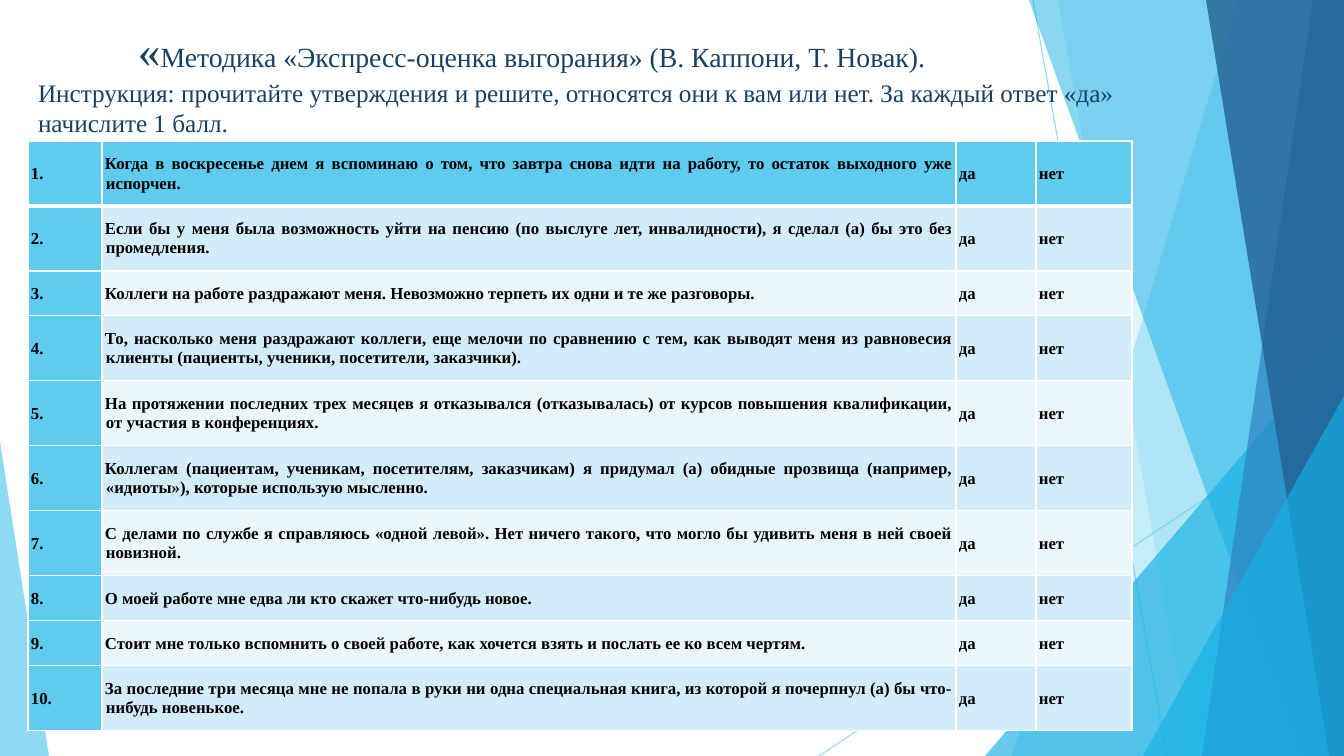
import pptx
import pptx.util
import pptx.dml.color
import pptx.enum.shapes
import pptx.enum.text
import pptx.oxml
import pptx.oxml.ns

COLORS = {
    "sky": "5FCBEF", "cyan": "17B0E4", "blue": "2E83C3", "navy": "226292",
    "heading": "174162", "band": "D2ECF9", "pale": "EAF6FC",
    "white": "FFFFFF", "black": "000000",
}
FONT = "Times New Roman"
WIDTH, HEIGHT = 1344, 756
PX = 12192000 / WIDTH

TITLE = [("«", 32.4), ("Методика «Экспресс-оценка выгорания» (В. Каппони, Т. Новак).", 19.8)]
INSTRUCTION = ("Инструкция: прочитайте утверждения и решите, относятся они к вам или нет. "
               "За каждый ответ «да» начислите 1 балл.")
ANSWERS = ["да", "нет"]
TALL, SHORT = 65, 45
STATEMENTS = [
    ("Когда в воскресенье днем я вспоминаю о том, что завтра снова идти на работу, "
     "то остаток выходного уже испорчен.", TALL),
    ("Если бы у меня была возможность уйти на пенсию (по выслуге лет, инвалидности), "
     "я сделал (а) бы это без промедления.", TALL),
    ("Коллеги на работе раздражают меня. Невозможно терпеть их одни и те же разговоры.", SHORT),
    ("То, насколько меня раздражают коллеги, еще мелочи по сравнению с тем, как выводят меня "
     "из равновесия клиенты (пациенты, ученики, посетители, заказчики).", TALL),
    ("На протяжении последних трех месяцев я отказывался (отказывалась) от курсов повышения "
     "квалификации, от участия в конференциях.", TALL),
    ("Коллегам (пациентам, ученикам, посетителям, заказчикам) я придумал (а) обидные прозвища "
     "(например, «идиоты»), которые использую мысленно.", TALL),
    ("С делами по службе я справляюсь «одной левой». Нет ничего такого, что могло бы удивить "
     "меня в ней своей новизной.", TALL),
    ("О моей работе мне едва ли кто скажет что-нибудь новое.", SHORT),
    ("Стоит мне только вспомнить о своей работе, как хочется взять и послать ее ко всем чертям.",
     SHORT),
    ("За последние три месяца мне не попала в руки ни одна специальная книга, из которой "
     "я почерпнул (а) бы что-нибудь новенькое.", TALL),
]
COLUMNS = [74, 854, 80, 96]
TABLE_LEFT, TABLE_TOP = 28, 141

RAYS = [(1033, 0, 1167, HEIGHT), (WIDTH, 406, 819, HEIGHT)]
# Strips: top x, bottom x, colour, opacity; each reaches the right edge of the slide.
# Triangles: left, top, width, apex position, colour, opacity; each stands on the bottom edge.
FACETS = [
    ("strip", (1238, 1012, "sky", 36)),
    ("strip", (1058, 1192, "sky", 20)),
    ("triangle", (985, 336, 359, 1, "cyan", 66)),
    ("strip", (1029, 1301, "cyan", 50)),
    ("strip", (1313, 1202, "blue", 70)),
    ("strip", (1206, 1329, "navy", 80)),
    ("triangle", (1143, 396, 201, 1, "cyan", 66)),
    ("triangle", (0, 442, 49, 0, "sky", 70)),
]


def px(length):
    return pptx.util.Emu(round(length * PX))


def rgb(name):
    return pptx.dml.color.RGBColor.from_string(COLORS[name])


def set_opacity(shape, percent):
    for color in shape.element.spPr.iter(pptx.oxml.ns.qn("a:srgbClr")):
        color.append(pptx.oxml.parse_xml(
            f'<a:alpha {pptx.oxml.ns.nsdecls("a")} val="{percent * 1000}"/>'))


def format_run(run, size, color, bold=False):
    run.font.name = FONT
    run.font.size = pptx.util.Pt(size)
    run.font.bold = bold
    run.font.color.rgb = rgb(color)


def set_indent(paragraph, left, first):
    properties = paragraph._p.get_or_add_pPr()
    properties.set("marL", str(px(left)))
    properties.set("indent", str(px(first)))
    return properties


def add_ray(shapes, x1, y1, x2, y2):
    ray = shapes.add_connector(pptx.enum.shapes.MSO_CONNECTOR.STRAIGHT,
                               px(x1), px(y1), px(x2), px(y2))
    ray.line.color.rgb = rgb("sky")
    ray.line.width = pptx.util.Pt(0.75)
    ray.element.spPr.append(pptx.oxml.parse_xml(
        f'<a:effectLst {pptx.oxml.ns.nsdecls("a")}/>'))
    set_opacity(ray, 70)


def add_facet(shapes, kind, geometry):
    *place, color, opacity = geometry
    if kind == "strip":
        top_x, bottom_x = place
        builder = shapes.build_freeform(top_x, 0, scale=PX)
        builder.add_line_segments([(WIDTH, 0), (WIDTH, HEIGHT), (bottom_x, HEIGHT)])
        facet = builder.convert_to_shape()
    else:
        left, top, width, apex = place
        facet = shapes.add_shape(pptx.enum.shapes.MSO_SHAPE.ISOSCELES_TRIANGLE,
                                 px(left), px(top), px(width), px(HEIGHT - top))
        facet.adjustments[0] = apex
    facet.shadow.inherit = False
    facet.fill.solid()
    facet.fill.fore_color.rgb = rgb(color)
    facet.line.fill.background()
    set_opacity(facet, opacity)


def place_text(shape, left, top, width, height, inset_top):
    """Move a placeholder in front of the facets and set its box."""
    shape.element.getparent().append(shape.element)
    shape.left, shape.top, shape.width, shape.height = map(px, (left, top, width, height))
    frame = shape.text_frame
    frame.word_wrap = True
    frame.auto_size = pptx.enum.text.MSO_AUTO_SIZE.NONE
    frame.vertical_anchor = pptx.enum.text.MSO_ANCHOR.TOP
    frame.margin_left = frame.margin_right = px(10)
    frame.margin_top, frame.margin_bottom = px(inset_top), px(5)
    return frame.paragraphs[0]


def set_borders(cell, row):
    weights = {"L": 1, "R": 1, "T": 3 if row == 1 else 1, "B": 3 if row == 0 else 1}
    properties = cell._tc.get_or_add_tcPr()
    for index, (side, weight) in enumerate(weights.items()):
        properties.insert(index, pptx.oxml.parse_xml(
            f'<a:ln{side} {pptx.oxml.ns.nsdecls("a")} w="{pptx.util.Pt(weight)}"><a:solidFill>'
            f'<a:srgbClr val="{COLORS["white"]}"/></a:solidFill></a:ln{side}>'))


def fill_cell(cell, text, row, column):
    cell.margin_left = cell.margin_right = cell.margin_top = cell.margin_bottom = px(3)
    cell.vertical_anchor = pptx.enum.text.MSO_ANCHOR.MIDDLE
    cell.fill.solid()
    band = "band" if row % 2 else "pale"
    cell.fill.fore_color.rgb = rgb("sky" if row == 0 or column == 0 else band)
    set_borders(cell, row)
    cell.text_frame.text = text
    paragraph = cell.text_frame.paragraphs[0]
    paragraph.alignment = pptx.enum.text.PP_ALIGN.JUSTIFY
    paragraph.line_spacing = 1.03
    set_indent(paragraph, 1, -1)
    format_run(paragraph.runs[0], 12, "black", bold=True)


def add_questionnaire(shapes):
    heights = [height for _, height in STATEMENTS]
    table = shapes.add_table(len(heights), len(COLUMNS), px(TABLE_LEFT), px(TABLE_TOP),
                             px(sum(COLUMNS)), px(sum(heights))).table
    for column, width in zip(table.columns, COLUMNS):
        column.width = px(width)
    for row, (statement, height) in enumerate(STATEMENTS):
        table.rows[row].height = px(height)
        for column, text in enumerate([f"{row + 1}.", statement, *ANSWERS]):
            fill_cell(table.cell(row, column), text, row, column)


def main():
    presentation = pptx.Presentation()
    presentation.slide_width, presentation.slide_height = px(WIDTH), px(HEIGHT)
    slide = presentation.slides.add_slide(presentation.slide_layouts[1])

    for ray in RAYS:
        add_ray(slide.shapes, *ray)
    for kind, geometry in FACETS:
        add_facet(slide.shapes, kind, geometry)

    heading = place_text(slide.shapes.title, 61, 12, 941, 59, inset_top=10)
    heading.alignment = pptx.enum.text.PP_ALIGN.CENTER
    for text, size in TITLE:
        run = heading.add_run()
        run.text = text
        format_run(run, size, "heading")

    instruction = place_text(slide.placeholders[1], 28, 72, 1166, 70, inset_top=5)
    instruction.text = INSTRUCTION
    instruction.space_before = pptx.util.Pt(10)
    set_indent(instruction, 0, 0).append(
        pptx.oxml.parse_xml(f'<a:buNone {pptx.oxml.ns.nsdecls("a")}/>'))
    format_run(instruction.runs[0], 18, "heading")

    add_questionnaire(slide.shapes)
    presentation.save("out.pptx")


if __name__ == "__main__":
    main()
